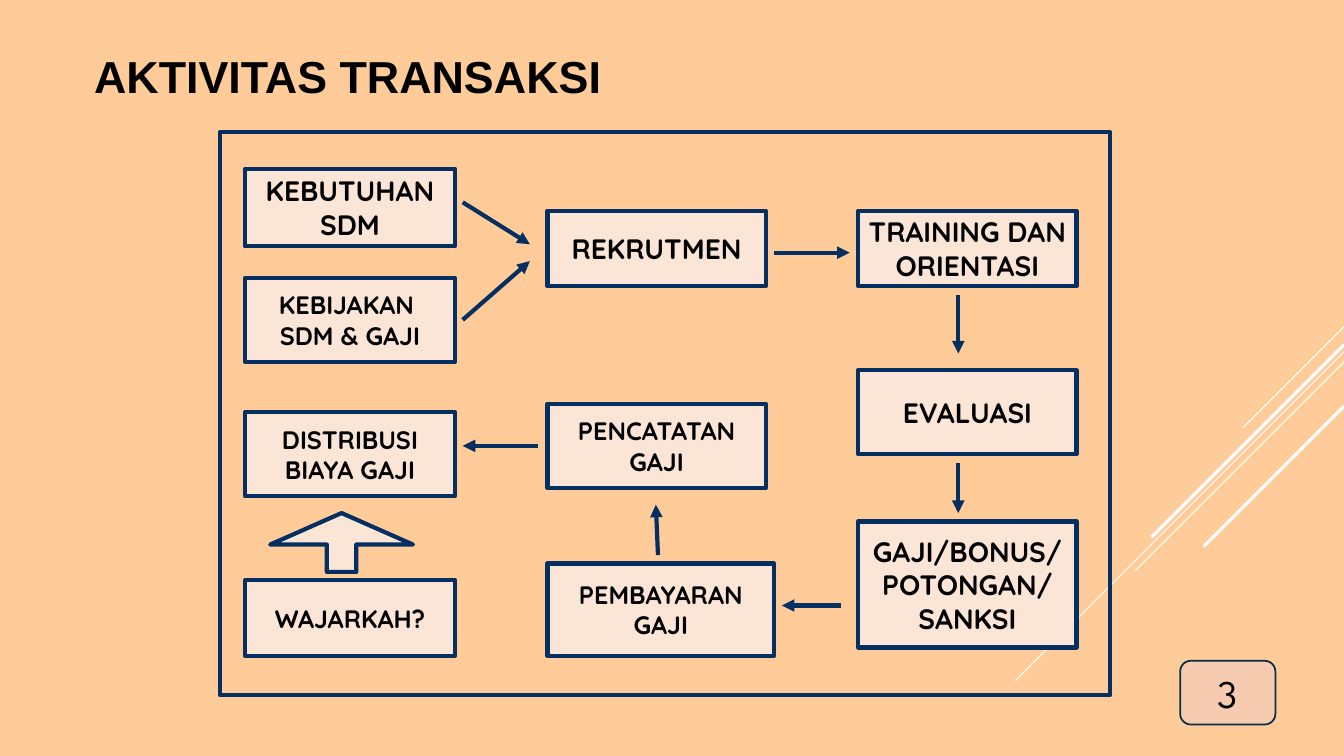
from dataclasses import dataclass

import pptx
import pptx.dml.color
import pptx.enum.shapes
import pptx.enum.text
import pptx.oxml
import pptx.oxml.ns
import pptx.util
from lxml import etree

Pt = pptx.util.Pt
Shapes = pptx.enum.shapes.MSO_SHAPE
Align = pptx.enum.text.PP_ALIGN
Anchor = pptx.enum.text.MSO_ANCHOR


@dataclass(frozen=True)
class Theme:
    background: str = "FFCC99"
    navy: str = "052F61"
    cream: str = "FAE5D7"
    badge: str = "F6CBAF"
    badge_line: str = "043148"
    white: str = "FFFFFF"
    black: str = "000000"
    title_font: str = "Arial"
    box_font: str = "Quicksand"
    number_font: str = "League Spartan"
    title_size: float = 32
    number_size: float = 28
    large: float = 20
    medium: float = 18
    outline: float = 3


THEME = Theme()
SLIDE_WIDTH, SLIDE_HEIGHT = 960, 540

# Column: left, width
LEFT, MIDDLE, RIGHT = (175, 150), (391, 156), (613, 156)

# Text, column, top, height, type size
STEPS = [
    ("REKRUTMEN", MIDDLE, 150.5, 54, THEME.large),
    ("TRAINING DAN\nORIENTASI", RIGHT, 150.5, 54, THEME.large),
    ("KEBIJAKAN \nSDM & GAJI", LEFT, 198.5, 60, THEME.medium),
    ("EVALUASI", RIGHT, 264.5, 60, THEME.large),
    ("GAJI/BONUS/\nPOTONGAN/\nSANKSI", RIGHT, 372.5, 90, THEME.large),
    ("PEMBAYARAN\nGAJI", (391, 162), 402.5, 66, THEME.medium),
    ("PENCATATAN\nGAJI", MIDDLE, 288.5, 60, THEME.medium),
    ("DISTRIBUSI\nBIAYA GAJI", LEFT, 294.5, 60, THEME.medium),
    ("WAJARKAH?", LEFT, 414.5, 54, THEME.medium),
]

# Start x, start y, end x, end y
ARROWS = [
    (330.5, 144.5, 378.5, 174.5),
    (330.5, 228.5, 378.5, 186.5),
    (553, 180.5, 607, 180.5),
    (684.5, 210.5, 684.5, 252.5),
    (684.5, 330.5, 684.5, 366.5),
    (600.5, 432.5, 558.5, 432.5),
    (470, 396.5, 468.5, 360.5),
    (384.5, 318.5, 330.5, 318.5),
]

# Height at the right edge, run to the lower left, line width
STRIPES = [
    (233.3, 72, 0.75),
    (251.3, 234.7, 0.75),
    (258.5, 149, 0.75),
    (246.2, 137.5, 2.25),
    (290.2, 100, 2.25),
]


def rgb(color):
    return pptx.dml.color.RGBColor.from_string(color)


def write_text(shape, text, *, font, size, bold=False, align=Align.CENTER, wrap=False):
    """Fill a shape with text, one paragraph for each line."""
    frame = shape.text_frame
    frame.text = text
    frame.word_wrap = wrap
    frame.auto_size = pptx.enum.text.MSO_AUTO_SIZE.NONE
    frame.vertical_anchor = Anchor.MIDDLE
    for paragraph in frame.paragraphs:
        paragraph.alignment = align
        for run in paragraph.runs:
            run.font.name = font
            run.font.size = Pt(size)
            run.font.bold = bold
            run.font.color.rgb = rgb(THEME.black)


def add_outlined(slide, kind, left, top, width, height, *, fill=None,
                 line=THEME.navy, weight=THEME.outline):
    shape = slide.shapes.add_shape(kind, Pt(left), Pt(top), Pt(width), Pt(height))
    shape.shadow.inherit = False
    if fill:
        shape.fill.solid()
        shape.fill.fore_color.rgb = rgb(fill)
    else:
        shape.fill.background()
    shape.line.color.rgb = rgb(line)
    shape.line.width = Pt(weight)
    return shape


def add_step(slide, text, column, top, height, size, wrap=False):
    left, width = column
    box = add_outlined(slide, Shapes.RECTANGLE, left, top, width, height, fill=THEME.cream)
    write_text(box, text, font=THEME.box_font, size=size, bold=True, wrap=wrap)


def add_line(slide, start_x, start_y, end_x, end_y, *, color, weight, arrow=False):
    line = slide.shapes.add_connector(
        pptx.enum.shapes.MSO_CONNECTOR.STRAIGHT,
        Pt(start_x), Pt(start_y), Pt(end_x), Pt(end_y))
    line.line.color.rgb = rgb(color)
    line.line.width = Pt(weight)
    if arrow:
        outline = line.line._get_or_add_ln()
        etree.SubElement(outline, pptx.oxml.ns.qn("a:tailEnd"), type="triangle")
    etree.SubElement(line._element.spPr, pptx.oxml.ns.qn("a:effectLst"))


def set_title(slide, text):
    title = slide.shapes.title
    title.left, title.top, title.width, title.height = Pt(60), Pt(25), Pt(672), Pt(58.5)
    write_text(title, text, font=THEME.title_font, size=THEME.title_size,
               bold=True, align=Align.LEFT, wrap=True)


def add_number_badge(slide, number):
    badge = add_outlined(slide, Shapes.ROUNDED_RECTANGLE, 843, 472, 68, 45.5,
                         fill=THEME.badge, line=THEME.badge_line, weight=1.25)
    write_text(badge, number, font=THEME.number_font, size=THEME.number_size)


def main():
    presentation = pptx.Presentation()
    presentation.slide_width = Pt(SLIDE_WIDTH)
    presentation.slide_height = Pt(SLIDE_HEIGHT)
    slide = presentation.slides.add_slide(presentation.slide_layouts.get_by_name("Title Only"))
    slide.background.fill.solid()
    slide.background.fill.fore_color.rgb = rgb(THEME.background)

    for top, run, weight in STRIPES:
        add_line(slide, SLIDE_WIDTH, top, SLIDE_WIDTH - run, top + run,
                 color=THEME.white, weight=weight)
    add_number_badge(slide, "3")
    set_title(slide, "AKTIVITAS TRANSAKSI")

    add_outlined(slide, Shapes.RECTANGLE, 157, 94.5, 636, 402)
    add_step(slide, "KEBUTUHAN SDM", LEFT, 120.5, 55.5, THEME.large, wrap=True)
    for step in STEPS:
        add_step(slide, *step)
    for arrow in ARROWS:
        add_line(slide, *arrow, color=THEME.navy, weight=THEME.outline, arrow=True)
    up_arrow = add_outlined(slide, Shapes.UP_ARROW, 193, 366.5, 102, 42, fill=THEME.cream)
    up_arrow.adjustments[0] = 0.206 
    up_arrow.adjustments[1] = 0.536

    presentation.save("out.pptx")


if __name__ == "__main__":
    main()
